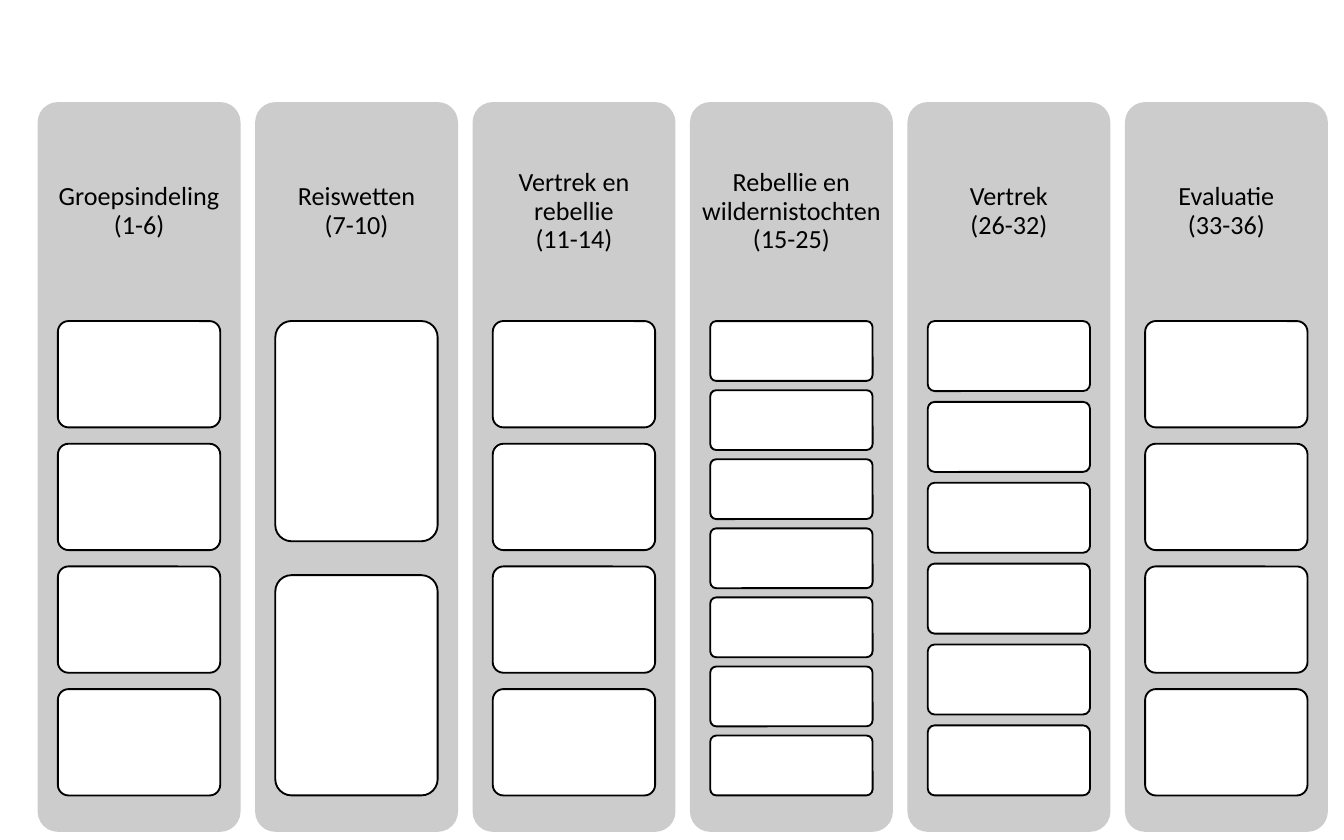
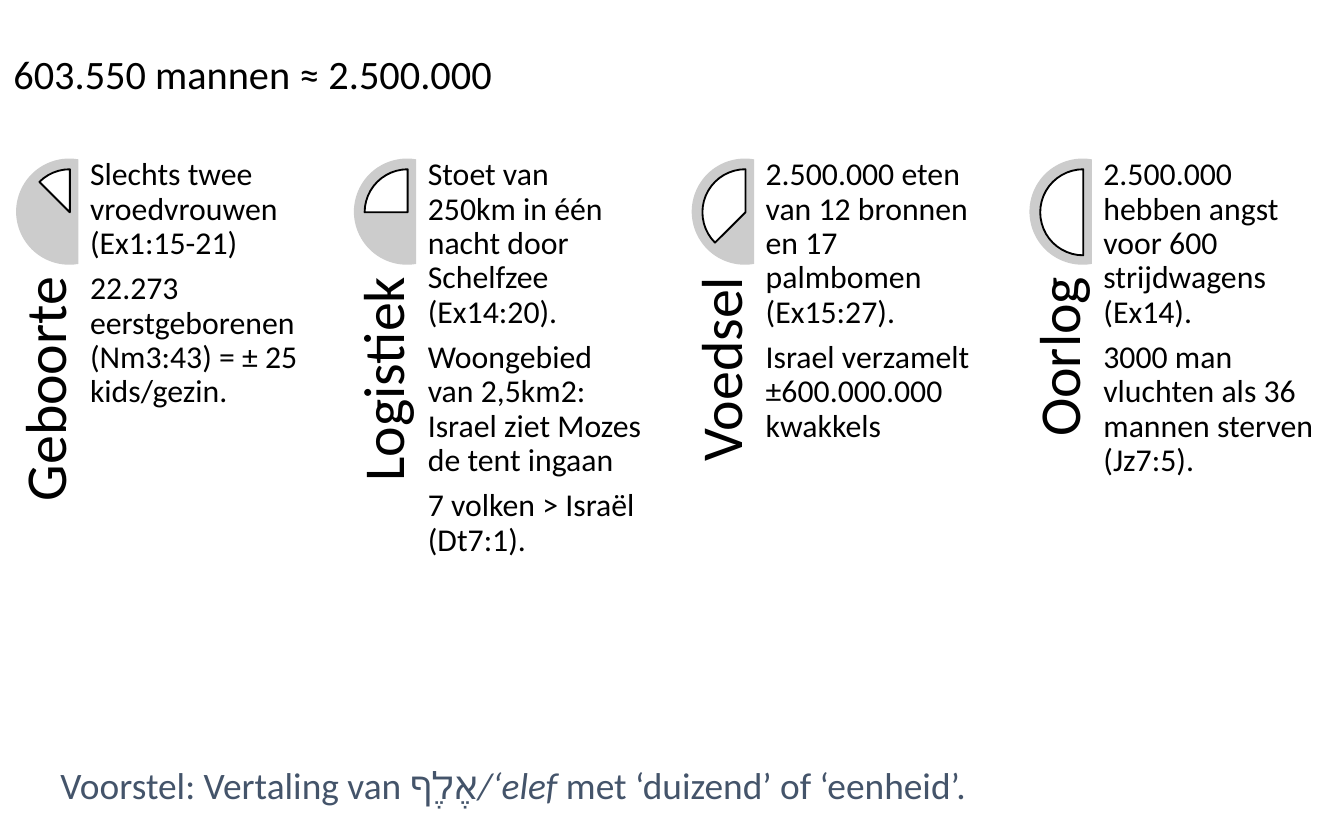
from pptx import Presentation
from pptx.dml.color import RGBColor
from pptx.enum.shapes import MSO_SHAPE
from pptx.enum.text import MSO_ANCHOR, MSO_AUTO_SIZE, PP_ALIGN
from pptx.util import Inches, Pt

ROUND, CHORD, PIE = MSO_SHAPE.ROUNDED_RECTANGLE, MSO_SHAPE.CHORD, MSO_SHAPE.PIE
TOP, MIDDLE, BOTTOM = MSO_ANCHOR.TOP, MSO_ANCHOR.MIDDLE, MSO_ANCHOR.BOTTOM
LEFT, CENTER, RIGHT = PP_ALIGN.LEFT, PP_ALIGN.CENTER, PP_ALIGN.RIGHT
NO_FIT = MSO_AUTO_SIZE.NONE

FONT = "Calibri"
BLACK, WHITE, GREY, SLATE = "000000", "FFFFFF", "CCCCCC", "44546A"

# Column headings with the number of empty tiles below each
PARTS = [
    ("Groepsindeling (1-6)", 4),
    ("Reiswetten\n(7-10)", 2),
    ("Vertrek en rebellie\n(11-14)", 4),
    ("Rebellie en wildernistochten (15-25)", 7),
    ("Vertrek\n(26-32)", 6),
    ("Evaluatie\n(33-36)", 4),
]

# Topics with their arguments
TOPICS = [
    ("Geboorte", ["Slechts twee vroedvrouwen (Ex1:15-21)",
                  "22.273 eerstgeborenen (Nm3:43) = ± 25 kids/gezin."]),
    ("Logistiek", ["Stoet van 250km in één nacht door Schelfzee (Ex14:20).",
                   "Woongebied van 2,5km2: Israel ziet Mozes de tent ingaan",
                   "7 volken > Israël (Dt7:1)."]),
    ("Voedsel", ["2.500.000 eten van 12 bronnen en 17 palmbomen (Ex15:27).",
                 "Israel verzamelt ±600.000.000 kwakkels"]),
    ("Oorlog", ["2.500.000 hebben angst voor 600 strijdwagens (Ex14).",
                "3000 man vluchten als 36 mannen sterven (Jz7:5)."]),
]


def color(code):
    return RGBColor.from_string(code)


def add_form(slide, kind, box, fill, adjs, line=None):
    form = slide.shapes.add_shape(kind, *map(Inches, box))
    form.shadow.inherit = False
    form.fill.solid()
    form.fill.fore_color.rgb = color(fill)
    if line:
        form.line.color.rgb = color(line)
        form.line.width = Pt(1)
    else:
        form.line.fill.background()
    for i, adj in enumerate(adjs):
        form.adjustments[i] = adj
    return form


def set_frame(frame, anchor, inset=None):
    frame.word_wrap = True
    frame.auto_size = NO_FIT
    frame.vertical_anchor = anchor
    if inset is not None:
        frame.margin_left = frame.margin_right = Inches(inset)
        frame.margin_top = frame.margin_bottom = Inches(inset)


def add_run(para, text, size, ink=BLACK, italic=False):
    run = para.add_run()
    run.text = text
    font = run.font
    font.name, font.size, font.italic = FONT, Pt(size), italic
    font.color.rgb = color(ink)


def write(frame, texts, size, align=LEFT):
    """Write one paragraph per text; a newline becomes a line break."""
    for i, text in enumerate(texts):
        para = frame.add_paragraph() if i else frame.paragraphs[0]
        para.alignment = align
        para.line_spacing = 0.9
        para.space_before = Pt(0)
        para.space_after = Pt(0.35 * size)
        for j, part in enumerate(text.split("\n")):
            if j:
                para.add_line_break()
            add_run(para, part, size)


def add_text(slide, box, texts, size, align=LEFT, anchor=TOP, inset=0):
    area = slide.shapes.add_textbox(*map(Inches, box))
    set_frame(area.text_frame, anchor, inset)
    write(area.text_frame, texts, size, align)
    return area


# Column: grey panel, heading and evenly spread tiles
def add_column(slide, box, head, count):
    x, y, w, h = box
    add_form(slide, ROUND, box, GREY, [0.1])
    add_text(slide, (x, y, w, 0.3 * h), [head], 14, CENTER, MIDDLE, 0.06)
    ratio = 2 / 13  # gap relative to tile height
    tile = 0.65 * h / (count + (count - 1) * ratio)
    for i in range(count):
        top = y + 0.3 * h + i * tile * (1 + ratio)
        add_form(slide, ROUND, (x + 0.1 * w, top, 0.8 * w, tile),
                 WHITE, [0.1], BLACK)


# Topic: half disc with a growing wedge, upright label and arguments
def add_topic(slide, x, y, label, texts, start):
    add_form(slide, CHORD, (x, y, 0.79, 0.79), GREY, [48, 168])
    add_form(slide, PIE, (x + 0.08, y + 0.08, 0.64, 0.64),
             WHITE, [start, 162], BLACK)
    name = add_text(slide, (x - 0.92, y + 1.79, 2.3, 0.48), [label], 31,
                    RIGHT, BOTTOM)
    name.rotation = 270
    add_text(slide, (x + 0.55, y, 1.59, 3.18), texts, 17)


def add_title(slide, box, text):
    title = slide.shapes.title
    title.left, title.top, title.width, title.height = map(Inches, box)
    set_frame(title.text_frame, MIDDLE)
    write(title.text_frame, [text], 21.6)


# Closing line with an italic transcription
def add_note(slide, box):
    note = slide.shapes.add_textbox(*map(Inches, box))
    set_frame(note.text_frame, MIDDLE)
    para = note.text_frame.paragraphs[0]
    add_run(para, "Voorstel: Vertaling van אֶלֶף", 20, SLATE)
    add_run(para, "/‘elef", 20, SLATE, True)
    add_run(para, " met ‘duizend’ of ‘eenheid’.", 20, SLATE)


def build_parts(deck):
    slide = deck.slides.add_slide(deck.slide_layouts[6])
    step = (8.37 - 0.28) / (len(PARTS) - 1)
    for i, (head, count) in enumerate(PARTS):
        add_column(slide, (0.28 + i * step, 0.76, 1.51, 5.43), head, count)


def build_topics(deck):
    slide = deck.slides.add_slide(deck.slide_layouts[5])
    add_title(slide, (0, 0.37, 5.94, 0.39), "603.550 mannen ≈ 2.500.000")
    step = (7.66 - 0.12) / (len(TOPICS) - 1)
    for i, (label, texts) in enumerate(TOPICS):
        add_topic(slide, 0.12 + i * step, 1.18, label, texts, 135 - 27 * i)
    add_note(slide, (0.35, 5.64, 9.61, 0.39))


def main():
    deck = Presentation()
    deck.slide_width, deck.slide_height = Inches(10), Inches(6.25)
    build_parts(deck)
    build_topics(deck)
    deck.save("out.pptx")


if __name__ == "__main__":
    main()
